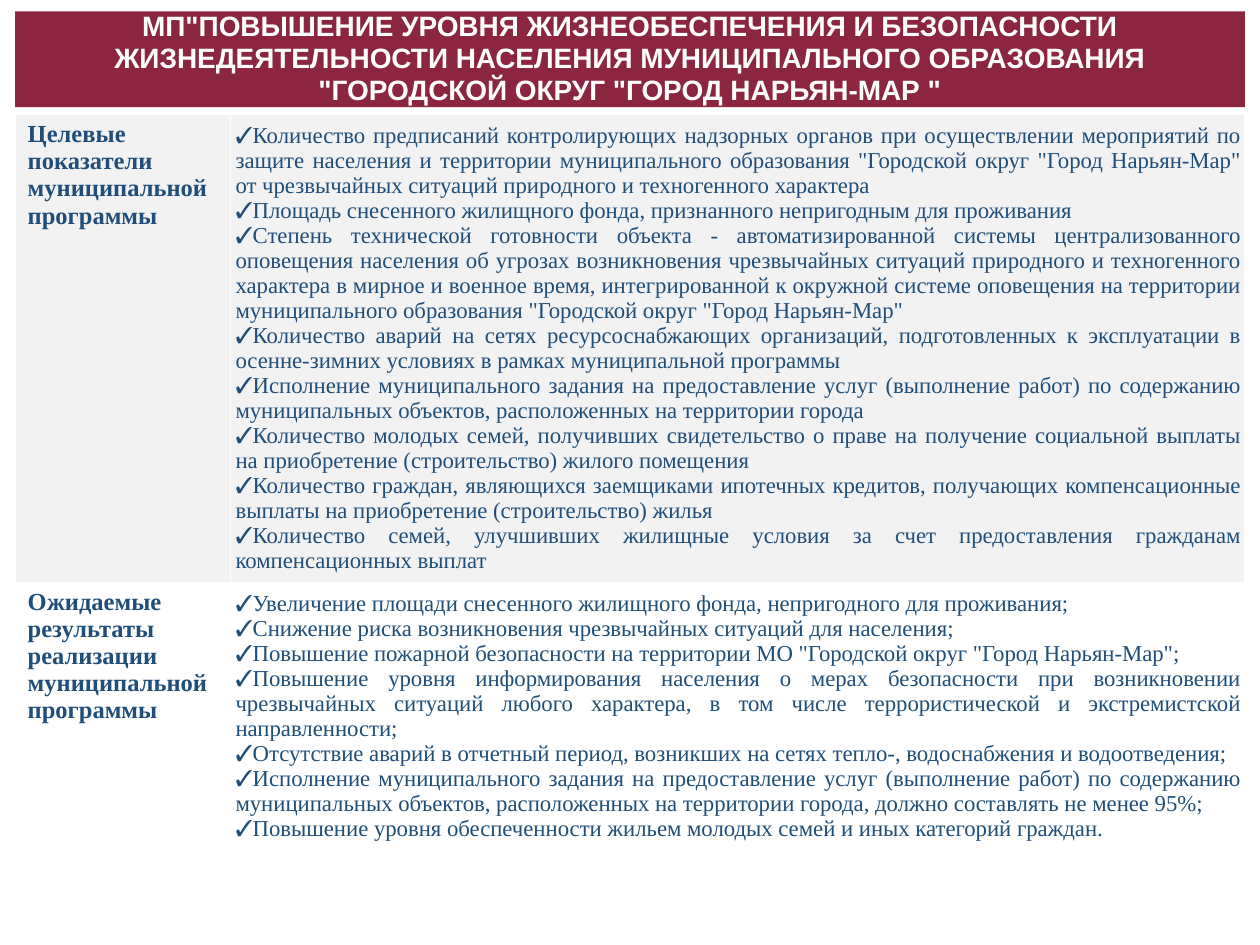
from dataclasses import dataclass

from lxml.etree import SubElement
from pptx import Presentation
from pptx.dml.color import RGBColor
from pptx.enum.shapes import MSO_SHAPE
from pptx.enum.text import MSO_ANCHOR, PP_ALIGN
from pptx.oxml.ns import qn
from pptx.util import Inches, Pt

LEFT, WIDTH = 0.12, 9.76
COLUMN_WIDTHS = (1.71, 8.05)
WHITE, GREY, BURGUNDY, NAVY = "FFFFFF", "F2F2F2", "8C2540", "1F4E79"
BODY_FONT = "Times New Roman"
TITLE = (
    'МП"ПОВЫШЕНИЕ УРОВНЯ ЖИЗНЕОБЕСПЕЧЕНИЯ И БЕЗОПАСНОСТИ ЖИЗНЕДЕЯТЕЛЬНОСТИ '
    'НАСЕЛЕНИЯ МУНИЦИПАЛЬНОГО ОБРАЗОВАНИЯ "ГОРОДСКОЙ ОКРУГ "ГОРОД НАРЬЯН-МАР "'
)


@dataclass
class Section:
    heading: str
    items: list[str]
    fill: str
    height: float


SECTIONS = [
    Section("Целевые показатели муниципальной программы", [
        "Количество предписаний контролирующих надзорных органов при осуществлении "
        "мероприятий по защите населения и территории муниципального образования "
        '"Городской округ "Город Нарьян-Мар" от чрезвычайных ситуаций природного и '
        "техногенного характера",
        "Площадь снесенного жилищного фонда, признанного непригодным для проживания",
        "Степень технической готовности объекта - автоматизированной системы "
        "централизованного оповещения населения об угрозах возникновения чрезвычайных "
        "ситуаций природного и техногенного характера в мирное и военное время, "
        "интегрированной к окружной системе оповещения на территории муниципального "
        'образования "Городской округ "Город Нарьян-Мар"',
        "Количество аварий на сетях ресурсоснабжающих организаций, подготовленных к "
        "эксплуатации в осенне-зимних условиях в рамках муниципальной программы",
        "Исполнение муниципального задания на предоставление услуг (выполнение работ) по "
        "содержанию муниципальных объектов, расположенных на территории города",
        "Количество молодых семей, получивших свидетельство о праве на получение "
        "социальной выплаты на приобретение (строительство) жилого помещения",
        "Количество граждан, являющихся заемщиками ипотечных кредитов, получающих "
        "компенсационные выплаты на приобретение (строительство) жилья",
        "Количество семей, улучшивших жилищные условия за счет предоставления гражданам "
        "компенсационных выплат",
    ], GREY, 3.7),
    Section("Ожидаемые результаты реализации муниципальной программы", [
        "Увеличение площади снесенного жилищного фонда, непригодного для проживания;",
        "Снижение риска возникновения чрезвычайных ситуаций для населения;",
        "Повышение пожарной безопасности на территории МО "
        '"Городской округ "Город Нарьян-Мар";',
        "Повышение уровня информирования населения о мерах безопасности при "
        "возникновении чрезвычайных ситуаций любого характера, в том числе "
        "террористической и экстремистской направленности;",
        "Отсутствие аварий в отчетный период, возникших на сетях тепло-, водоснабжения "
        "и водоотведения;",
        "Исполнение муниципального задания на предоставление услуг (выполнение работ) по "
        "содержанию муниципальных объектов, расположенных на территории города, должно "
        "составлять не менее 95%;",
        "Повышение уровня обеспеченности жильем молодых семей и иных категорий граждан.",
    ], WHITE, 2.65),
]


def set_fill(fill, color: str) -> None:
    fill.solid()
    fill.fore_color.rgb = RGBColor.from_string(color)


def style_paragraph(paragraph, size: float, color: str, name: str, bold: bool,
                    alignment: PP_ALIGN) -> None:
    paragraph.alignment = alignment
    font = paragraph.font
    font.size, font.name, font.bold = Pt(size), name, bold
    font.color.rgb = RGBColor.from_string(color)


def add_check_bullet(paragraph) -> None:
    properties = paragraph._p.get_or_add_pPr()
    properties.set("marL", "0")
    properties.set("indent", "0")
    bullet_font = SubElement(properties, qn("a:buFont"), typeface=BODY_FONT)
    bullet = SubElement(properties, qn("a:buChar"), char="✓")
    properties.insert(0, bullet_font)
    properties.insert(1, bullet)


def style_cell(cell, fill: str) -> None:
    """Give the cell white one-point borders and a plain fill."""
    properties = cell._tc.get_or_add_tcPr()
    for side in ("lnL", "lnR", "lnT", "lnB"):
        line = SubElement(properties, qn(f"a:{side}"), w=str(Pt(1)))
        solid = SubElement(line, qn("a:solidFill"))
        SubElement(solid, qn("a:srgbClr"), val=WHITE)
    set_fill(cell.fill, fill)


def fill_row(table, index: int, section: Section) -> None:
    table.rows[index].height = Inches(section.height)
    heading_cell, items_cell = table.cell(index, 0), table.cell(index, 1)
    for cell in (heading_cell, items_cell):
        style_cell(cell, section.fill)

    heading_cell.text = section.heading
    style_paragraph(heading_cell.text_frame.paragraphs[0], 14, NAVY,
                    BODY_FONT, True, PP_ALIGN.LEFT)

    items_cell.margin_left = items_cell.margin_right = Inches(0.04)
    items_cell.margin_top = items_cell.margin_bottom = Inches(0.07)
    items_cell.text = "\n".join(section.items)
    for paragraph in items_cell.text_frame.paragraphs:
        style_paragraph(paragraph, 13, NAVY, BODY_FONT, False, PP_ALIGN.JUSTIFY)
        add_check_bullet(paragraph)


def add_sections_table(slide) -> None:
    height = sum(section.height for section in SECTIONS)
    table = slide.shapes.add_table(
        len(SECTIONS), len(COLUMN_WIDTHS),
        Inches(LEFT), Inches(0.91), Inches(WIDTH), Inches(height)).table
    table.first_row = table.horz_banding = False
    for column, width in zip(table.columns, COLUMN_WIDTHS):
        column.width = Inches(width)
    for index, section in enumerate(SECTIONS):
        fill_row(table, index, section)


def add_title(slide) -> None:
    banner = slide.shapes.add_shape(
        MSO_SHAPE.RECTANGLE, Inches(LEFT), Inches(0.09), Inches(WIDTH), Inches(0.76))
    banner.shadow.inherit = False
    set_fill(banner.fill, BURGUNDY)
    banner.line.fill.background()
    frame = banner.text_frame
    frame.word_wrap = True
    frame.margin_top = frame.margin_bottom = Inches(0)
    frame.vertical_anchor = MSO_ANCHOR.MIDDLE
    frame.text = TITLE
    paragraph = frame.paragraphs[0]
    style_paragraph(paragraph, 16, WHITE, "Arial", True, PP_ALIGN.CENTER)
    paragraph.line_spacing = 0.95


def main() -> None:
    presentation = Presentation()
    presentation.slide_width, presentation.slide_height = Inches(10), Inches(7.5)
    slide = presentation.slides.add_slide(presentation.slide_layouts[6])
    add_sections_table(slide)
    add_title(slide)
    presentation.save("out.pptx")


if __name__ == "__main__":
    main()
